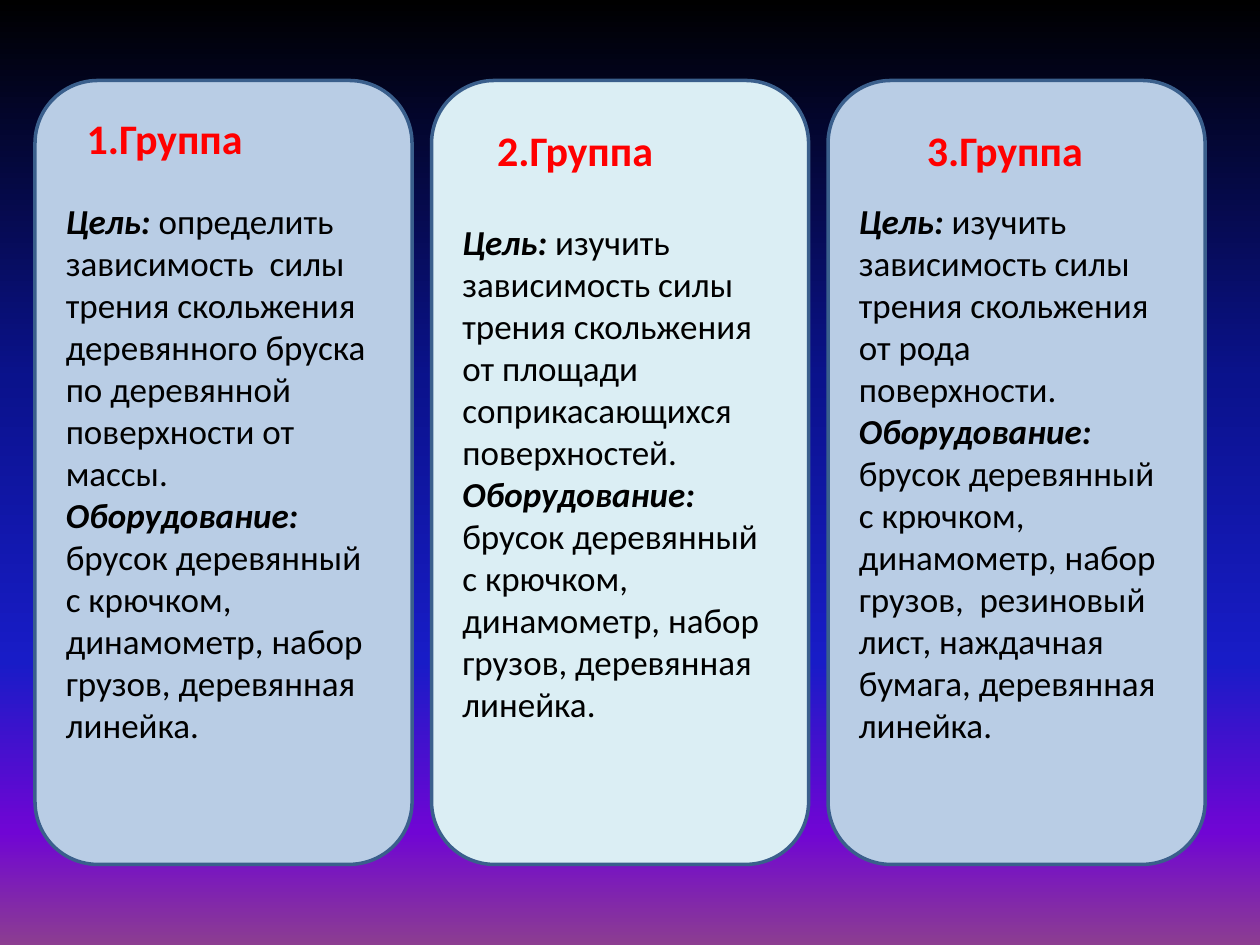
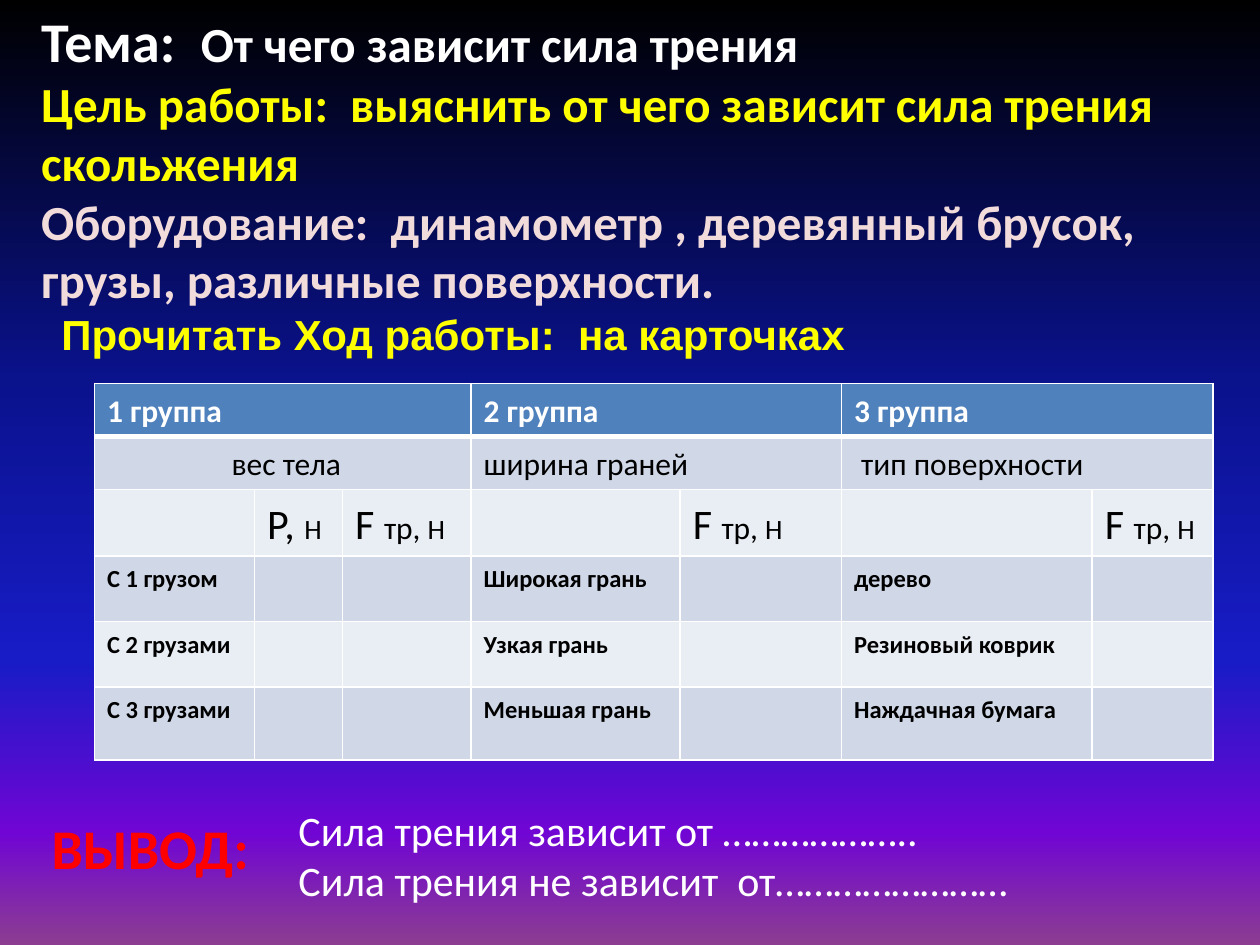
"""Builds two slides on sliding friction: group cards and a lab report table."""
from lxml import etree
from pptx import Presentation
from pptx.dml.color import RGBColor
from pptx.enum import shapes, text
from pptx.oxml import ns
from pptx.util import Pt

BLACK = RGBColor(0x00, 0x00, 0x00)
WHITE = RGBColor(0xFF, 0xFF, 0xFF)
RED = RGBColor(0xFF, 0x00, 0x00)
YELLOW = RGBColor(0xFF, 0xFF, 0x00)
PINK = RGBColor(0xF2, 0xDC, 0xDB)
BLUE = RGBColor(0xB9, 0xCD, 0xE5)
AQUA = RGBColor(0xDB, 0xEE, 0xF4)
EDGE = RGBColor(0x3A, 0x5F, 0x8C)
HEAD = RGBColor(0x4F, 0x81, 0xBD)
DARK = RGBColor(0xD0, 0xD8, 0xE8)
LIGHT = RGBColor(0xE9, 0xED, 0xF4)
STOPS = [
    (0, BLACK),
    (40, RGBColor(0x0A, 0x12, 0x8C)),
    (70, RGBColor(0x18, 0x1C, 0xC7)),
    (88, RGBColor(0x70, 0x05, 0xD4)),
    (100, RGBColor(0x8C, 0x3D, 0x91)),
]


def write(par, runs, color, bold=False, face="Calibri"):
    """Adds (words, size) runs in one style to a paragraph."""
    for words, size in runs:
        run = par.add_run()
        run.text = words
        run.font.size = Pt(size)
        run.font.name = face
        run.font.bold = bold
        run.font.color.rgb = color
    return par.runs


def label(slide, left, top, width, height):
    """Adds a wrapping text box and returns its frame."""
    frame = slide.shapes.add_textbox(Pt(left), Pt(top), Pt(width), Pt(height)).text_frame
    frame.word_wrap = True
    return frame


prs = Presentation()
prs.slide_width, prs.slide_height = Pt(720), Pt(540)

master = prs.slide_master
back = master.background.fill
back.gradient()
back.gradient_angle = 270
ramp = master.element.find(".//" + ns.qn("a:gsLst"))
for old in list(ramp):
    ramp.remove(old)
for place, color in STOPS:
    stop = etree.SubElement(ramp, ns.qn("a:gs"), pos=str(place * 1000))
    etree.SubElement(stop, ns.qn("a:srgbClr"), val=str(color))

blank = prs.slide_layouts[6]

slide = prs.slides.add_slide(blank)
KIT = "брусок деревянный с крючком, динамометр, набор грузов, "
CARDS = [
    (BLUE, "определить зависимость  силы трения скольжения деревянного бруска "
           "по деревянной поверхности от массы.",
     KIT + "деревянная линейка.", (42.5, 60.5, 130)),
    (AQUA, "изучить зависимость силы трения скольжения от площади "
           "соприкасающихся поверхностей.",
     KIT + "деревянная линейка.", (277, 67.5, 117.5)),
    (BLUE, "изучить зависимость силы трения скольжения от рода поверхности.",
     KIT + " резиновый лист, наждачная бумага, деревянная линейка.", (522.5, 67.5, 117.5)),
]
for num, (color, goal, kit, (left, top, width)) in enumerate(CARDS):
    card = slide.shapes.add_shape(
        shapes.MSO_SHAPE.ROUNDED_RECTANGLE, Pt(20 + 226.6 * num), Pt(46), Pt(215.5), Pt(448))
    card.shadow.inherit = False
    card.fill.solid()
    card.fill.fore_color.rgb = color
    card.line.color.rgb = EDGE
    card.line.width = Pt(2)
    frame = card.text_frame
    frame.word_wrap = True
    frame.vertical_anchor = text.MSO_ANCHOR.MIDDLE
    for par, head, body in [(frame.paragraphs[0], "Цель: ", goal),
                            (frame.add_paragraph(), "Оборудование: ", kit)]:
        par.alignment = text.PP_ALIGN.LEFT
        runs = write(par, [(head, 20), (body, 20)], BLACK)
        runs[0].font.bold = runs[0].font.italic = True
    frame = label(slide, left, top, width, 36)
    write(frame.paragraphs[0], [(f"{num + 1}.Группа", 24)], RED, True)

slide = prs.slides.add_slide(blank)
frame = label(slide, 16.5, 0, 703.5, 245)
INTRO = [
    ([("Тема:  ", 32), ("От чего зависит сила трения", 28)], WHITE, "Calibri"),
    ([("Цель работы:  выяснить от чего зависит сила трения скольжения", 28)],
     YELLOW, "Calibri"),
    ([("Оборудование:  динамометр , деревянный брусок, грузы, различные поверхности.", 28)],
     PINK, "Calibri"),
    ([("Прочитать Ход работы:  на карточках", 24)], YELLOW, "Arial"),
]
for num, (runs, color, face) in enumerate(INTRO):
    par = frame.add_paragraph() if num else frame.paragraphs[0]
    write(par, runs, color, True, face)
par._p.get_or_add_pPr().set("marL", str(Pt(11.5)))

frame = label(slide, 22.5, 461.5, 128, 46)
write(frame.paragraphs[0], [("ВЫВОД:", 32)], RED, True)

frame = label(slide, 163.5, 456, 424, 65.5)
write(frame.paragraphs[0], [("Сила трения зависит от ………………..", 24)], WHITE)
write(frame.add_paragraph(), [("Сила трения не зависит  от……………………", 24)], WHITE)

WIDTHS = [91.4, 50.4, 73.4, 119.5, 92.2, 143.3, 69.1]
HEIGHTS = [28.8, 28.8, 36, 37.4, 37.4, 41.8]
FILLS = [HEAD, DARK, LIGHT, DARK, LIGHT, DARK]
FORCE = [("F ", 24), ("тр, ", 18), ("Н", 16)]
GROUPS = [(0, 2), (3, 4), (5, 6)]
TITLES = ["1 группа", "2 группа", "3 группа"]
THEMES = [" вес тела", "ширина граней", " тип поверхности"]
CASES = [
    ["С 1 грузом", "Широкая грань", "дерево"],
    ["С 2 грузами", "Узкая грань", "Резиновый коврик"],
    ["С 3 грузами", "Меньшая грань", "Наждачная бумага"],
]
cells = {(2, 1): [("Р, ", 24), ("Н", 16)]}
for num, (first, last) in enumerate(GROUPS):
    cells[0, first] = [(TITLES[num], 18)]
    cells[1, first] = [(THEMES[num], 18)]
    cells[2, last] = FORCE
    for row, case in enumerate(CASES, 3):
        cells[row, first] = [(case[num], 14)]

table = slide.shapes.add_table(
    6, 7, Pt(54), Pt(219), Pt(sum(WIDTHS)), Pt(sum(HEIGHTS))).table
table.horz_banding = False
for col, width in zip(table.columns, WIDTHS):
    col.width = Pt(width)
for row, height in zip(table.rows, HEIGHTS):
    row.height = Pt(height)
for row in range(6):
    for col in range(7):
        cell = table.cell(row, col)
        props = cell._tc.get_or_add_tcPr()
        for side in "LRTB":
            thick = (row, side) in [(0, "B"), (1, "T")]
            line = etree.SubElement(props, ns.qn("a:ln" + side), w=str(Pt(3 if thick else 1)))
            solid = etree.SubElement(line, ns.qn("a:solidFill"))
            etree.SubElement(solid, ns.qn("a:srgbClr"), val=str(WHITE))
        cell.fill.solid()
        cell.fill.fore_color.rgb = FILLS[row]
        if (row, col) in cells:
            par = cell.text_frame.paragraphs[0]
            par.line_spacing = 1.07
            par.space_after = Pt(8)
            write(par, cells[row, col], BLACK if row else WHITE, row not in (1, 2))
for row in range(2):
    for first, last in GROUPS:
        table.cell(row, first).merge(table.cell(row, last))
table.cell(1, 0).text_frame.paragraphs[0].alignment = text.PP_ALIGN.CENTER

prs.save("out.pptx")
